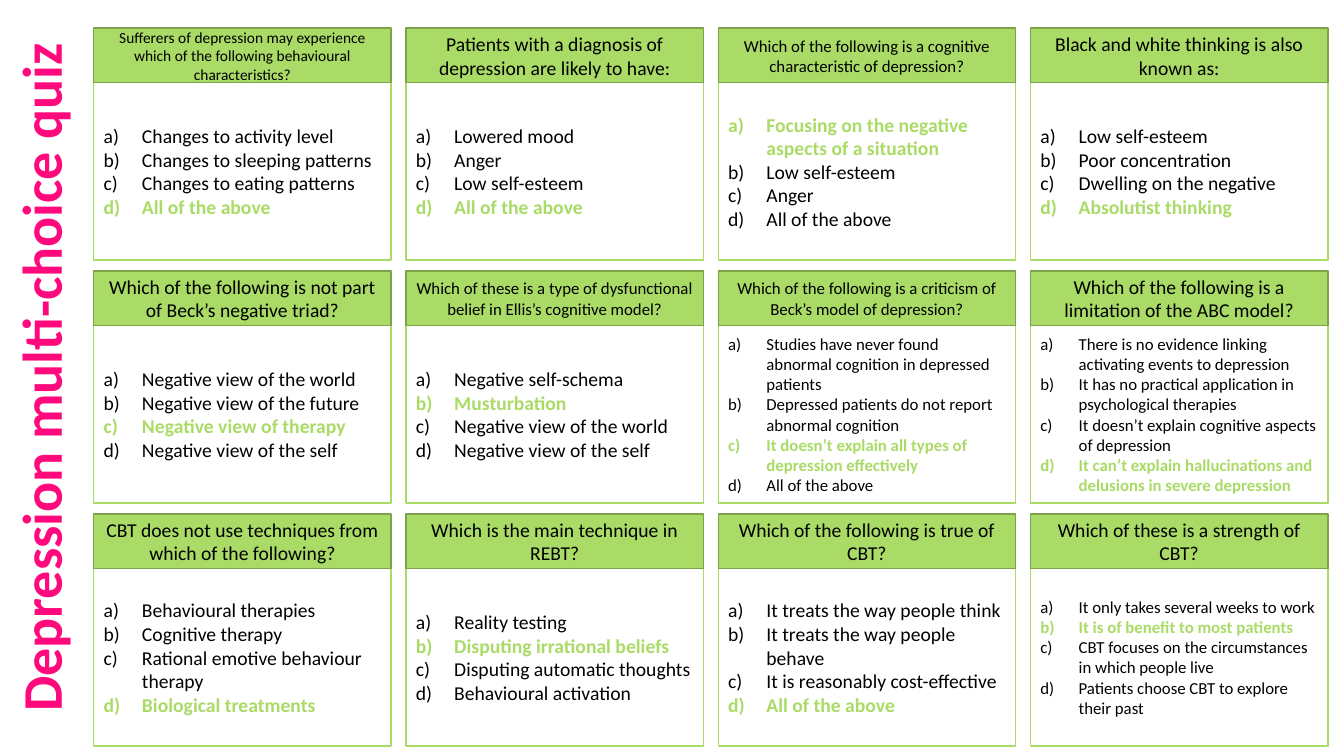
"""Build a quiz slide: a grid of twelve question cards beside an upright title."""
from dataclasses import dataclass

from lxml.etree import SubElement
from pptx import Presentation
from pptx.dml.color import RGBColor as Rgb
from pptx.enum.shapes import MSO_SHAPE as Kind
from pptx.enum.text import MSO_ANCHOR as Anchor, PP_ALIGN as Align
from pptx.oxml.ns import qn
from pptx.slide import Slide
from pptx.text.text import _Paragraph as Para
from pptx.util import Inches as Inch, Pt

FONT = "Calibri"
GREEN, EDGE, PINK = "A9DB66", "7DA24B", "FF097C"
BLACK, WHITE = "000000", "FFFFFF"
COLS = 4
LEFT, LAST, TOP = 0.93, 10.22, 0.28
STEP_X, STEP_Y = (LAST - LEFT) / (COLS - 1), 2.41
WIDE, HEAD, BODY = 2.95, 0.54, 1.76
INDENT = 0.38


@dataclass
class Card:
    """A question, its options, the index of the right one and the text sizes."""
    ask: str
    picks: list[str]
    right: int
    ask_pt: int = 14
    pick_pt: int = 14


CARDS = [
    Card("Sufferers of depression may experience which of the following behavioural characteristics?",
         ["Changes to activity level", "Changes to sleeping patterns",
          "Changes to eating patterns", "All of the above"], 3, ask_pt=11),
    Card("Patients with a diagnosis of depression are likely to have:",
         ["Lowered mood", "Anger", "Low self-esteem", "All of the above"], 3),
    Card("Which of the following is a cognitive characteristic of depression?",
         ["Focusing on the negative aspects of a situation", "Low self-esteem",
          "Anger", "All of the above"], 0, ask_pt=12),
    Card("Black and white thinking is also known as:",
         ["Low self-esteem", "Poor concentration",
          "Dwelling on the negative", "Absolutist thinking"], 3),
    Card("Which of the following is not part of Beck’s negative triad?",
         ["Negative view of the world", "Negative view of the future",
          "Negative view of therapy", "Negative view of the self"], 2),
    Card("Which of these is a type of dysfunctional belief in Ellis’s cognitive model?",
         ["Negative self-schema", "Musturbation",
          "Negative view of the world", "Negative view of the self"], 1, ask_pt=12),
    Card("Which of the following is a criticism of Beck’s model of depression?",
         ["Studies have never found abnormal cognition in depressed patients",
          "Depressed patients do not report abnormal cognition",
          "It doesn’t explain all types of depression effectively",
          "All of the above"], 2, ask_pt=12, pick_pt=12),
    Card("Which of the following is a limitation of the ABC model?",
         ["There is no evidence linking activating events to depression",
          "It has no practical application in psychological therapies",
          "It doesn’t explain cognitive aspects of depression",
          "It can’t explain hallucinations and delusions in severe depression"], 3, pick_pt=12),
    Card("CBT does not use techniques from which of the following?",
         ["Behavioural therapies", "Cognitive therapy",
          "Rational emotive behaviour therapy", "Biological treatments"], 3),
    Card("Which is the main technique in REBT?",
         ["Reality testing", "Disputing irrational beliefs",
          "Disputing automatic thoughts", "Behavioural activation"], 1),
    Card("Which of the following is true of CBT?",
         ["It treats the way people think", "It treats the way people behave",
          "It is reasonably cost-effective", "All of the above"], 3),
    Card("Which of these is a strength of CBT?",
         ["It only takes several weeks to work", "It is of benefit to most patients",
          "CBT focuses on the circumstances in which people live",
          "Patients choose CBT to explore their past"], 1, pick_pt=12),
]


def tint(code: str) -> Rgb:
    """Turn a hex string into a colour."""
    return Rgb.from_string(code)


def style(para: Para, size: int, code: str = BLACK, bold: bool = False,
          align: Align = Align.LEFT) -> None:
    """Align a paragraph and format its runs."""
    para.alignment = align
    for run in para.runs:
        run.font.name, run.font.size, run.font.bold = FONT, Pt(size), bold
        run.font.color.rgb = tint(code)


def letter(para: Para) -> None:
    """Number a paragraph a), b), c) with a hanging indent."""
    props = para._p.get_or_add_pPr()
    props.set("marL", str(Inch(INDENT)))
    props.set("indent", str(-Inch(INDENT)))
    SubElement(props, qn("a:buFont"), typeface="+mj-lt")
    SubElement(props, qn("a:buAutoNum"), type="alphaLcParenR")


def panel(slide: Slide, x: float, y: float, high: float, fill: str, line: str,
          text: str) -> list[Para]:
    """Draw one box of a card and return its paragraphs."""
    box = slide.shapes.add_shape(Kind.RECTANGLE, Inch(x), Inch(y), Inch(WIDE), Inch(high))
    box.shadow.inherit = False
    box.fill.solid()
    box.fill.fore_color.rgb = tint(fill)
    box.line.color.rgb = tint(line)
    box.line.width = Pt(1)
    frame = box.text_frame
    frame.word_wrap = True
    frame.vertical_anchor = Anchor.MIDDLE
    frame.text = text
    return list(frame.paragraphs)


def draw(slide: Slide, card: Card, col: int, row: int) -> None:
    """Draw a card in its cell of the grid."""
    x, y = LEFT + col * STEP_X, TOP + row * STEP_Y
    paras = panel(slide, x, y + HEAD, BODY, WHITE, GREEN, "\n".join(card.picks))
    for i, para in enumerate(paras):
        hit = i == card.right
        style(para, card.pick_pt, GREEN if hit else BLACK, hit)
        letter(para)
    for para in panel(slide, x, y, HEAD, GREEN, EDGE, card.ask):
        style(para, card.ask_pt, align=Align.CENTER)


def title(slide: Slide, text: str) -> None:
    """Set the title upright along the left edge."""
    box = slide.shapes.add_textbox(Inch(-3.35), Inch(3.36), Inch(7.49), Inch(0.77))
    box.rotation = 270
    box.text_frame.word_wrap = True
    box.text_frame.text = text
    style(box.text_frame.paragraphs[0], 40, PINK, True, Align.CENTER)


def main() -> None:
    """Build and save the slide."""
    deck = Presentation()
    deck.slide_width, deck.slide_height = Inch(13.33), Inch(7.5)
    slide = deck.slides.add_slide(deck.slide_layouts[6])
    for i, card in enumerate(CARDS):
        row, col = divmod(i, COLS)
        draw(slide, card, col, row)
    title(slide, "Depression multi-choice quiz")
    deck.save("out.pptx")


if __name__ == "__main__":
    main()
